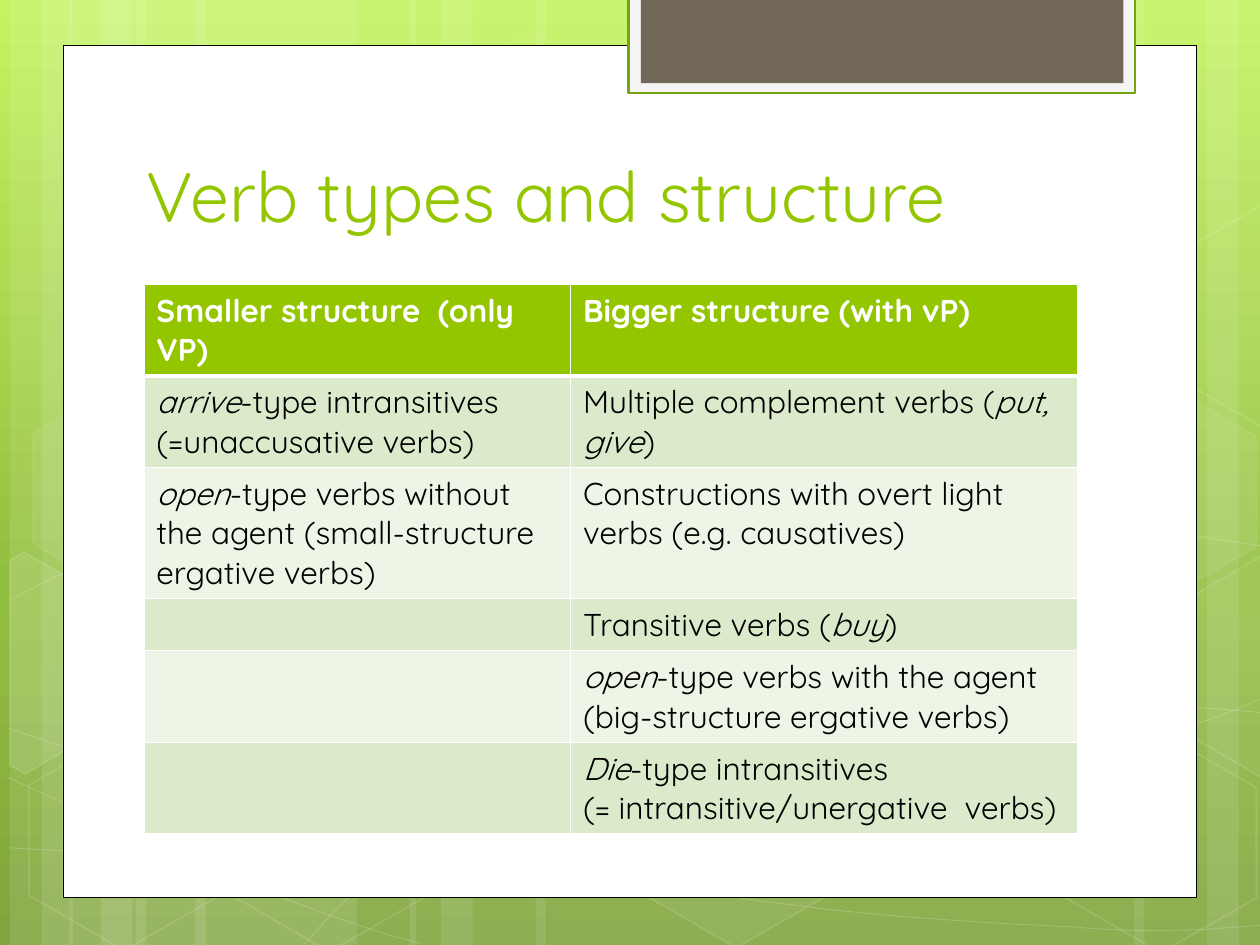
from copy import deepcopy
from dataclasses import dataclass
from math import cos, radians, sin
from typing import Optional

from lxml.etree import SubElement
from pptx import Presentation
from pptx.dml.color import RGBColor
from pptx.enum.shapes import MSO_SHAPE
from pptx.enum.text import MSO_ANCHOR, MSO_AUTO_SIZE, PP_ALIGN
from pptx.oxml.ns import qn
from pptx.util import Cm, Pt

FONT = "Quicksand"
WHITE = RGBColor(0xFF, 0xFF, 0xFF)
BLACK = RGBColor(0, 0, 0)
GREEN = RGBColor(0x94, 0xC6, 0x00)
DARK_GREEN = RGBColor(0x74, 0xA5, 0x10)
OFF_WHITE = RGBColor(0xF5, 0xF5, 0xF5)
BROWN = RGBColor(0x71, 0x68, 0x5A)
BANDS = (RGBColor(0xDC, 0xEA, 0xCC), RGBColor(0xEE, 0xF5, 0xE7))
SKY = ((0, RGBColor(0xC3, 0xF3, 0x5F)), (0.62, RGBColor(0x93, 0xBF, 0x3F)),
       (1, RGBColor(0x81, 0xA5, 0x3E)))
TILT = 30  # degrees, shared by all hexagons
Point = tuple[float, float]


@dataclass
class Look:
    fill: Optional[RGBColor] = None
    fill_alpha: int = 100
    line: Optional[RGBColor] = None
    line_alpha: int = 100
    line_pt: float = 1


@dataclass
class Hexagon:
    left: float
    top: float
    fill_alpha: int  # 0 means outline only
    line_alpha: int = 12


# Left and width of the translucent vertical bars
BARS = [(2.74, 4.45), (0.2, 1.27), (0.84, 2.11), (3.94, 4.45), (1.4, 1.27), (2.04, 2.11),
        (18.62, 4.45), (24.33, 1.27), (22.86, 2.11), (10.8, 7.82), (8.26, 1.27), (8.89, 2.11)]

# Cubic curves: a start point, then two controls and an end for each segment
CURVES = [
    [(0.18, 17.09), (1.55, 17.17), (2.92, 17.25), (4.83, 17.22), (6.73, 17.2), (9.09, 17.15),
     (11.63, 16.89), (14.17, 16.64), (17.78, 16.15), (20.12, 15.67), (22.43, 15.19),
     (24.82, 14.43), (25.58, 14)],
    [(0.18, 12.12), (0.91, 11.71), (1.65, 11.33), (3.07, 10.95), (4.52, 10.57), (6.58, 10.06),
     (8.81, 9.83), (11.07, 9.65), (13.82, 9.63), (16.61, 9.83), (19.41, 10.03),
     (24.05, 10.82), (25.58, 11.02)],
    [(0.15, 15.67), (3.23, 17.07), (6.27, 18.47), (8.48, 19.02)],
    [(0.18, 14.68), (0.97, 14.96), (1.78, 15.24), (3.25, 15.65), (4.72, 16.03), (6.93, 16.66),
     (9.07, 17.09), (11.18, 17.53), (13.84, 17.98), (15.95, 18.24), (18.06, 18.52),
     (20.32, 18.62), (21.67, 18.69), (22.99, 18.8), (23.34, 18.75), (24, 18.75),
     (24.66, 18.72), (25.12, 18.67), (25.58, 18.64)],
    [(6.15, 19.02), (6.6, 18.52), (7.06, 18.01), (7.67, 17.55), (8.28, 17.09), (9.14, 16.59),
     (9.86, 16.23), (10.57, 15.88), (11, 15.72), (11.94, 15.47), (12.85, 15.21),
     (14.55, 14.86), (15.44, 14.68), (16.36, 14.5), (16.48, 14.5), (17.27, 14.45),
     (18.06, 14.38), (19.3, 14.3), (20.17, 14.27), (21.06, 14.25), (22.5, 14.27),
     (22.5, 14.27), (23, 14.27), (23.6, 14.27), (24.21, 14.27), (24.66, 14.3),
     (25.1, 14.33), (25.55, 14.38)],
]

HEXAGONS = [Hexagon(8.48, 0.91, 4, 8), Hexagon(12.62, 14.96, 6), Hexagon(0.28, 15.01, 0),
            Hexagon(0.36, 7.92, 7, 8), Hexagon(4.42, 15.04, 0), Hexagon(19.13, 11.51, 10),
            Hexagon(21.18, 15.06, 0), Hexagon(21.18, 7.98, 7, 8)]

# Hexagons cut off by the slide edge, with the centres they turn about
LEFT_CUT = [(0.2, 11.3), (0.48, 11.13), (2.44, 12.24), (2.41, 14.48), (0.51, 15.6), (0.2, 15.42)]
LEFT_CENTRE = (0.91, 13.59)
RIGHT_CUT = [(23.52, 12.32), (25.43, 11.2), (25.63, 11.33), (25.63, 15.57), (25.45, 15.67),
             (23.52, 14.55)]
RIGHT_CENTRE = (25.02, 13.21)
CUT_STEP = 7.07

# Asterisks enclose italics, a line break starts a paragraph
ROWS = [
    ("Smaller structure  (only VP)", "Bigger structure (with vP)"),
    ("*arrive*-type intransitives (=unaccusative verbs)",
     "Multiple complement verbs (*put, give*)"),
    ("*open*-type verbs without the agent (small-structure ergative verbs)",
     "Constructions with overt light verbs (e.g. causatives)"),
    ("", "Transitive verbs (*buy*)"),
    ("", "*open*-type verbs with the agent (big-structure ergative verbs)"),
    ("", "*Die*-type intransitives\n(= intransitive/unergative  verbs)"),
]
COL_WIDTHS = (8.6, 10.23)
ROW_HEIGHT = 1.03  # rows grow with their text


def set_alpha(color_format, percent: int) -> None:
    if percent < 100:
        clr = color_format._xFill.find(qn("a:srgbClr"))
        SubElement(clr, qn("a:alpha"), val=str(percent * 1000))


def style(sp, look: Look) -> None:
    sp.shadow.inherit = False
    for fmt, color, alpha in ((sp.fill, look.fill, look.fill_alpha),
                              (sp.line.fill, look.line, look.line_alpha)):
        if color is None:
            fmt.background()
            continue
        fmt.solid()
        fmt.fore_color.rgb = color
        set_alpha(fmt.fore_color, alpha)
    if look.line is not None:
        sp.line.width = Pt(look.line_pt)


def add_preset(s, kind, left: float, top: float, width: float, height: float, look: Look):
    sp = s.shapes.add_shape(kind, Cm(left), Cm(top), Cm(width), Cm(height))
    style(sp, look)
    return sp


def add_outline(s, points: list[Point], look: Look, close: bool = False):
    start, *rest = [(Cm(x), Cm(y)) for x, y in points]
    builder = s.shapes.build_freeform(*start)
    builder.add_line_segments(rest, close=close)
    sp = builder.convert_to_shape()
    style(sp, look)
    return sp


def add_curve(s, points: list[Point], look: Look) -> None:
    sp = add_outline(s, points, look)
    path = sp.element.find(f".//{qn('a:path')}")
    lines = path.findall(qn("a:lnTo"))
    for i in range(0, len(lines), 3):
        cubic = SubElement(path, qn("a:cubicBezTo"))
        for line in lines[i:i + 3]:
            cubic.append(line[0])
            path.remove(line)


def add_cut_hexagon(s, points: list[Point], centre: Point, shift: float, look: Look) -> None:
    (cx, cy), c, d = centre, cos(radians(TILT)), sin(radians(TILT))
    level = [(cx + (x - cx) * c + (y - cy) * d, cy + shift - (x - cx) * d + (y - cy) * c)
             for x, y in points]
    add_outline(s, level, look, close=True).rotation = TILT


def write(tf, text: str, *, size: float, color: RGBColor, bold: bool = False) -> None:
    for i, line in enumerate(text.split("\n")):
        p = tf.add_paragraph() if i else tf.paragraphs[0]
        p.alignment = PP_ALIGN.LEFT
        for n, part in enumerate(line.split("*")):
            if part:
                r = p.add_run()
                r.text = part
                r.font.name, r.font.size = FONT, Pt(size)
                r.font.bold, r.font.italic = bold, n % 2 == 1
                r.font.color.rgb = color


def set_borders(cell, **widths: float) -> None:
    tc_pr = cell._tc.get_or_add_tcPr()
    for side in "LRTB":
        ln = SubElement(tc_pr, qn(f"a:ln{side}"), w=str(Pt(widths.get(side, 1))))
        SubElement(SubElement(ln, qn("a:solidFill")), qn("a:srgbClr"), val=str(WHITE))


def paint_background(s) -> None:
    fill = s.background.fill
    fill.gradient()
    fill.gradient_angle = 270
    stops = s.element.find(f".//{qn('a:gsLst')}")
    stops.append(deepcopy(stops[-1]))
    for stop, (position, color) in zip(fill.gradient_stops, SKY):
        stop.position, stop.color.rgb = position, color


def add_decoration(s) -> None:
    for left, width in BARS:
        add_preset(s, MSO_SHAPE.RECTANGLE, left, 0, width, 19.05, Look(WHITE, 10))
    for curve in CURVES:
        add_curve(s, curve, Look(line=WHITE, line_alpha=20, line_pt=0.5))
    for h in HEXAGONS:
        look = Look(WHITE if h.fill_alpha else None, h.fill_alpha, WHITE, h.line_alpha)
        sp = add_preset(s, MSO_SHAPE.HEXAGON, h.left, h.top, 4.45, 3.86, look)
        sp.adjustments[0], sp.adjustments[1] = 0.29, 1.15
        sp.rotation = TILT
    add_cut_hexagon(s, LEFT_CUT, LEFT_CENTRE, 0, Look(WHITE, 10, WHITE, 12))
    add_cut_hexagon(s, RIGHT_CUT, RIGHT_CENTRE, 0, Look(WHITE, 4, WHITE, 12))
    add_cut_hexagon(s, RIGHT_CUT, RIGHT_CENTRE, -CUT_STEP, Look(line=WHITE, line_alpha=12))


def add_verb_table(s) -> None:
    frame = s.shapes.add_table(len(ROWS), len(COL_WIDTHS), Cm(2.9), Cm(5.73),
                               Cm(sum(COL_WIDTHS)), Cm(ROW_HEIGHT * len(ROWS)))
    for col, width in zip(frame.table.columns, COL_WIDTHS):
        col.width = Cm(width)
    for i, (row, texts) in enumerate(zip(frame.table.rows, ROWS)):
        header = i == 0
        for cell, text in zip(row.cells, texts):
            set_borders(cell, T=3 if i == 1 else 1, B=3 if header else 1)
            cell.fill.solid()
            cell.fill.fore_color.rgb = GREEN if header else BANDS[(i - 1) % 2]
            write(cell.text_frame, text, size=18, color=WHITE if header else BLACK, bold=header)


def main() -> None:
    prs = Presentation()
    prs.slide_width, prs.slide_height = Cm(25.4), Cm(19.05)
    s = prs.slides.add_slide(prs.slide_layouts[5])
    paint_background(s)
    add_decoration(s)

    # White page and the tab hanging from the top edge
    for box, look in (((1.27, 0.91, 22.86, 17.19), Look(WHITE, line=BLACK, line_pt=0.5)),
                      ((12.67, -0.05, 10.21, 1.93), Look(OFF_WHITE, line=DARK_GREEN, line_pt=1.25)),
                      ((12.92, -0.05, 9.73, 1.73), Look(BROWN))):
        add_preset(s, MSO_SHAPE.RECTANGLE, *box, look)

    # Title, brought in front of the page
    title = s.shapes.title
    title.left, title.top, title.width, title.height = Cm(2.69), Cm(1.72), Cm(19.51), Cm(3.17)
    tf = title.text_frame
    tf.auto_size, tf.vertical_anchor = MSO_AUTO_SIZE.NONE, MSO_ANCHOR.BOTTOM
    write(tf, "Verb types and structure", size=40, color=GREEN)
    s.shapes.element.append(title.element)

    add_verb_table(s)
    prs.save("out.pptx")


if __name__ == "__main__":
    main()
